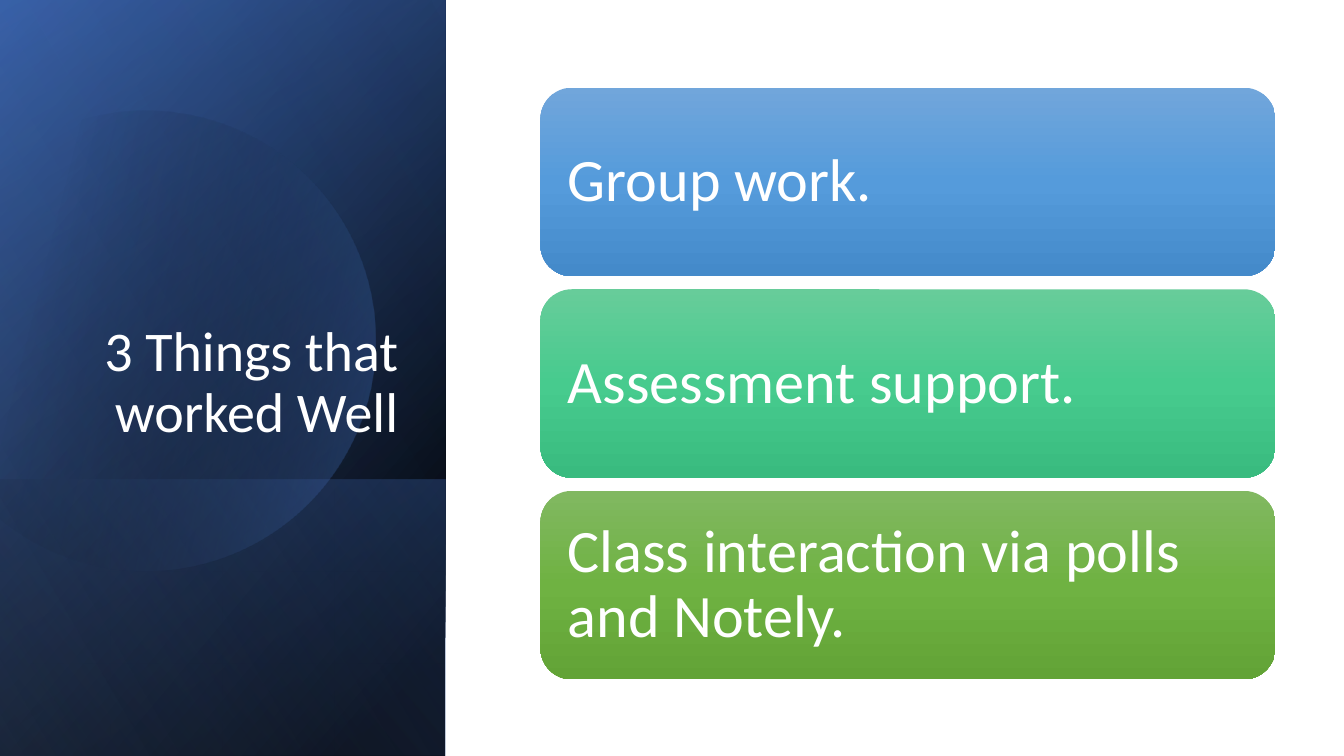
from lxml import etree
from pptx import Presentation
from pptx import util as u
from pptx.dml.color import RGBColor
from pptx.enum import shapes, text
from pptx.oxml.ns import qn

W, H = 13.33, 7.5
PANEL_W = W * 0.3315
BOX_LEFT, BOX_TOP, BOX_W, BOX_H, BOX_PITCH = 5.36, 0.87, 7.29, 1.87, 2.0

WHITE = RGBColor(0xFF, 0xFF, 0xFF)
BLACK = RGBColor(0x00, 0x00, 0x00)
NAVY = RGBColor(0x2F, 0x55, 0x97)
BLUE = RGBColor(0x44, 0x72, 0xC4)
PALE_BLUE = RGBColor(0x8F, 0xAA, 0xDC)
BLUES = [RGBColor(0x71, 0xA6, 0xDB), RGBColor(0x55, 0x9B, 0xDB), RGBColor(0x44, 0x8A, 0xCA)]
TEALS = [RGBColor(0x67, 0xCC, 0x9A), RGBColor(0x47, 0xCB, 0x8E), RGBColor(0x39, 0xBB, 0x7F)]
GREENS = [RGBColor(0x81, 0xB8, 0x61), RGBColor(0x6F, 0xB2, 0x42), RGBColor(0x62, 0xA3, 0x36)]

POINTS = [
    ("Group work.", BLUES),
    ("Assessment support.", TEALS),
    ("Class interaction via polls and Notely.", GREENS),
]


def add_gradient_shape(s, kind, left, top, width, height, stops, angle):
    sp = s.shapes.add_shape(kind, *map(u.Inches, (left, top, width, height)))
    sp.shadow.inherit = False
    sp.line.fill.background()
    sp.fill.gradient()
    grad = sp._element.spPr.find(qn("a:gradFill"))
    for child in list(grad):
        grad.remove(child)
    grad.set("rotWithShape", "1")
    gs_list = etree.SubElement(grad, qn("a:gsLst"))
    for position, color, opacity in stops:
        gs = etree.SubElement(gs_list, qn("a:gs"), pos=str(position * 1000))
        clr = etree.SubElement(gs, qn("a:srgbClr"), val=str(color))
        if opacity < 100:
            etree.SubElement(clr, qn("a:alpha"), val=str(opacity * 1000))
    etree.SubElement(grad, qn("a:lin"), ang=str(angle * 60000), scaled="0")
    return sp


def add_panel(s, top, height, stops, angle):
    sp = add_gradient_shape(
        s, shapes.MSO_SHAPE.RECTANGLE, (PANEL_W - height) / 2,
        top + (height - PANEL_W) / 2, height, PANEL_W, stops, angle)
    sp.rotation = 90
    sp._element.spPr.find(qn("a:xfrm")).set("flipH", "1")


def add_cut_circle(s, cx, cy, radius, arc, stops, angle):
    sp = add_gradient_shape(
        s, shapes.MSO_SHAPE.CHORD, cx - radius, cy - radius,
        2 * radius, 2 * radius, stops, angle)
    for i, degrees in enumerate(arc):
        sp.adjustments[i] = degrees * 0.6


def format_text(tf, content, size, align, anchor):
    tf.text = content
    tf.word_wrap = True
    tf.auto_size = text.MSO_AUTO_SIZE.NONE
    tf.vertical_anchor = anchor
    p = tf.paragraphs[0]
    p.alignment = align
    p.line_spacing = 0.9
    p.font.name = "Calibri"
    p.font.size = u.Pt(size)
    p.font.color.rgb = WHITE


def place_title(s, content):
    title = s.shapes.title
    title.left, title.top, title.width, title.height = map(
        u.Inches, (0.64, 1.84, 3.41, 2.62))
    format_text(title.text_frame, content, 40,
                text.PP_ALIGN.RIGHT, text.MSO_ANCHOR.BOTTOM)
    s.shapes._spTree.append(title._element)


def add_point(s, row, content, colors):
    sp = add_gradient_shape(
        s, shapes.MSO_SHAPE.ROUNDED_RECTANGLE, BOX_LEFT,
        BOX_TOP + row * BOX_PITCH, BOX_W, BOX_H,
        [(50 * i, color, 100) for i, color in enumerate(colors)], 90)
    tf = sp.text_frame
    tf.margin_left = tf.margin_right = tf.margin_top = tf.margin_bottom = u.Inches(0.18)
    format_text(tf, content, 43, text.PP_ALIGN.LEFT, text.MSO_ANCHOR.MIDDLE)


def main():
    prs = Presentation()
    prs.slide_width, prs.slide_height = u.Inches(W), u.Inches(H)
    s = prs.slides.add_slide(prs.slide_layouts[5])

    add_panel(s, 0, H, [(8, BLACK, 100), (100, NAVY, 100)], 50)
    add_panel(s, 0, H, [(0, BLACK, 0), (99, BLUE, 46)], 30)
    add_panel(s, 4.76, 2.74, [(2, BLUE, 29), (100, BLACK, 30)], 130)
    add_cut_circle(s, 1.44, 3.38, 2.28, (226, 134),
                   [(29, BLACK, 0), (100, BLUE, 43)], 14)
    add_panel(s, 0, H, [(0, BLACK, 0), (99, PALE_BLUE, 11)], 120)

    place_title(s, "3 Things that worked Well")
    for row, (content, colors) in enumerate(POINTS):
        add_point(s, row, content, colors)

    prs.save("out.pptx")


if __name__ == "__main__":
    main()
